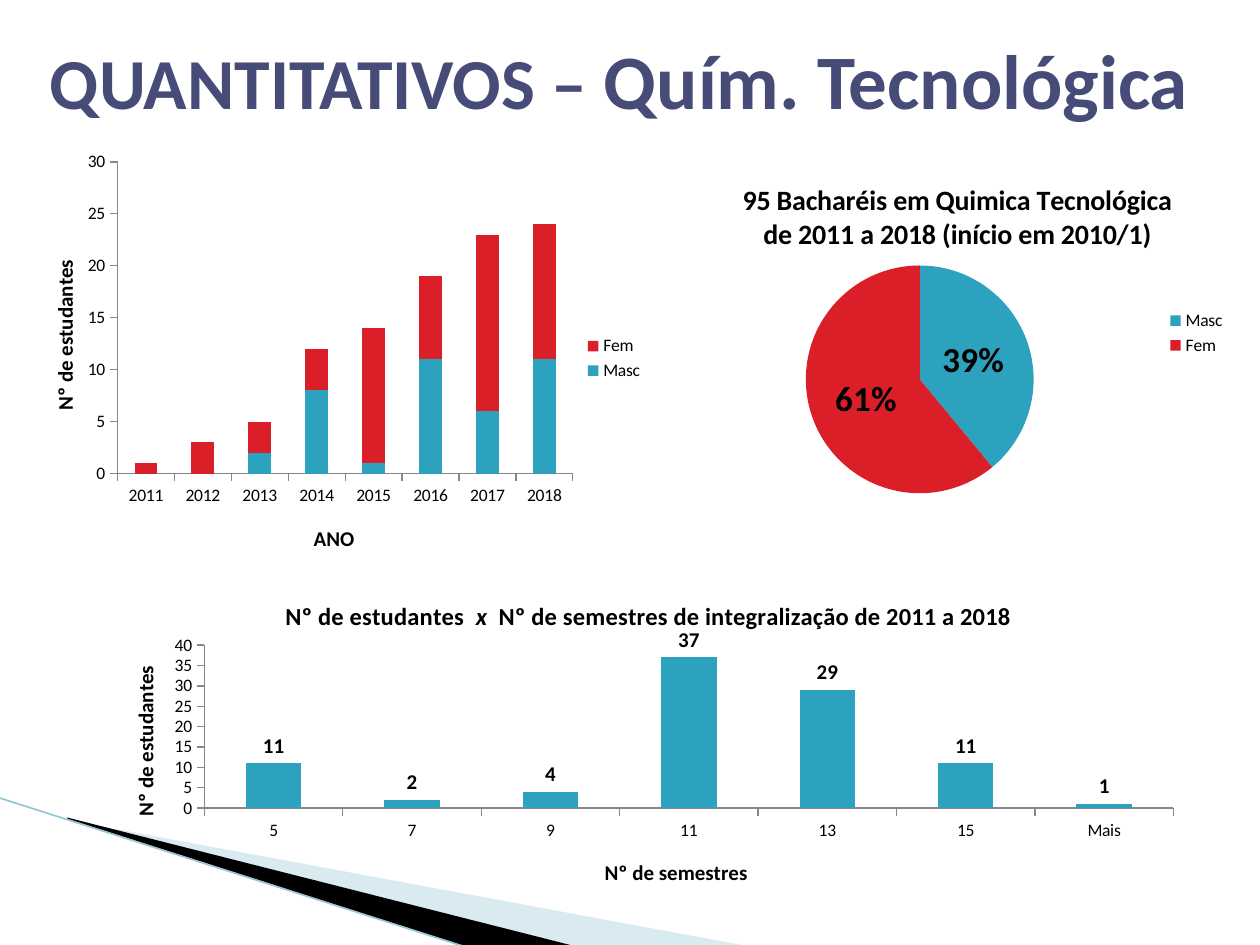
from dataclasses import dataclass

from lxml import etree
from pptx import Presentation
from pptx.chart.data import CategoryChartData
from pptx.dml.color import RGBColor
from pptx.enum.chart import XL_CHART_TYPE, XL_LABEL_POSITION, XL_LEGEND_POSITION, XL_TICK_MARK
from pptx.enum.shapes import MSO_CONNECTOR
from pptx.enum.text import MSO_ANCHOR, PP_ALIGN
from pptx.oxml.ns import qn
from pptx.util import Cm, Pt

STACKED = XL_CHART_TYPE.COLUMN_STACKED
CLUSTERED = XL_CHART_TYPE.COLUMN_CLUSTERED
PIE = XL_CHART_TYPE.PIE
OUTSIDE = XL_TICK_MARK.OUTSIDE
LEGEND_RIGHT = XL_LEGEND_POSITION.RIGHT
LABEL_CENTER = XL_LABEL_POSITION.CENTER
LABEL_ABOVE = XL_LABEL_POSITION.OUTSIDE_END
STRAIGHT = MSO_CONNECTOR.STRAIGHT
MIDDLE = MSO_ANCHOR.MIDDLE
CENTER = PP_ALIGN.CENTER


@dataclass(frozen=True)
class Theme:
    font: str = "Calibri"
    heading: RGBColor = RGBColor(0x47, 0x4B, 0x78)
    text: RGBColor = RGBColor(0, 0, 0)
    masc: RGBColor = RGBColor(0x2D, 0xA2, 0xBF)
    fem: RGBColor = RGBColor(0xDA, 0x1F, 0x28)
    axis: RGBColor = RGBColor(0x87, 0x87, 0x87)
    pale: RGBColor = RGBColor(0xA0, 0xCB, 0xDC)
    edge: RGBColor = RGBColor(0x97, 0xC5, 0xD8)
    tick_size: int = 10
    axis_title_size: int = 12
    heading_sizes: tuple = (41, 44)


THEME = Theme()


def style_font(font, size, color=THEME.text, bold=False):
    font.name = THEME.font
    font.size = Pt(size)
    font.bold = bold
    font.color.rgb = color


def add_run(paragraph, text, size, color=THEME.text, italic=False):
    run = paragraph.add_run()
    run.text = text
    style_font(run.font, size, color, bold=True)
    if italic:
        run.font.italic = True


# Background wedge
def add_wedge(slide, points, color, opacity=None):
    corners = [(Cm(x), Cm(y)) for x, y in points]
    builder = slide.shapes.build_freeform(*corners[0])
    builder.add_line_segments(corners[1:], close=True)
    wedge = builder.convert_to_shape()
    wedge.shadow.inherit = False
    wedge.line.fill.background()
    wedge.fill.solid()
    wedge.fill.fore_color.rgb = color
    if opacity is not None:
        srgb = wedge.fill._xPr.find(".//" + qn("a:srgbClr"))
        etree.SubElement(srgb, qn("a:alpha"), val=str(opacity * 1000))


def add_edge(slide, start, end):
    edge = slide.shapes.add_connector(STRAIGHT, *(Cm(v) for v in start + end))
    edge.line.color.rgb = THEME.edge
    edge.line.width = Pt(0.95)
    etree.SubElement(edge._element.spPr, qn("a:effectLst"))


# Heading
def fill_heading(slide, parts):
    heading = slide.shapes.title
    heading.left, heading.top, heading.width, heading.height = Cm(0.05), Cm(0), Cm(24.87), Cm(3.18)
    heading.text_frame.vertical_anchor = MIDDLE
    paragraph = heading.text_frame.paragraphs[0]
    paragraph.alignment = CENTER
    for text, size in zip(parts, THEME.heading_sizes):
        add_run(paragraph, text, size, THEME.heading)


# Chart parts
def place(parent, index, inner=False, **fractions):
    """Set a manual layout in fractions of the chart area."""
    old = parent.find(qn("c:layout"))
    if old is not None:
        parent.remove(old)
    layout = parent.makeelement(qn("c:layout"))
    parent.insert(index, layout)
    manual = etree.SubElement(layout, qn("c:manualLayout"))
    if inner:
        etree.SubElement(manual, qn("c:layoutTarget"), val="inner")
    for side in "xy":
        etree.SubElement(manual, qn(f"c:{side}Mode"), val="edge")
    for side, fraction in fractions.items():
        etree.SubElement(manual, qn(f"c:{side}"), val=str(fraction))


def write_title(title, parts, size, position):
    paragraph = title.text_frame.paragraphs[0]
    for text, italic in parts:
        add_run(paragraph, text, size, italic=italic)
    x, y = position
    place(title._element, 1, x=x, y=y)


def add_chart(slide, kind, box, categories, series, plot_area):
    data = CategoryChartData()
    data.categories = categories
    for name, values in series:
        data.add_series(name, values)
    chart = slide.shapes.add_chart(kind, *(Cm(v) for v in box), data).chart
    style_font(chart.font, THEME.tick_size)
    chart.has_title = False
    chart.has_legend = False
    x, y, w, h = plot_area
    place(chart._chartSpace.chart.plotArea, 0, inner=True, x=x, y=y, w=w, h=h)
    return chart


def add_legend(chart):
    chart.has_legend = True
    chart.legend.position = LEGEND_RIGHT
    chart.legend.include_in_layout = False
    style_font(chart.legend.font, THEME.tick_size)


def style_axis(axis, title, position):
    axis.has_major_gridlines = False
    axis.major_tick_mark = OUTSIDE
    axis.format.line.color.rgb = THEME.axis
    style_font(axis.tick_labels.font, THEME.tick_size)
    write_title(axis.axis_title, [(title, False)], THEME.axis_title_size, position)


def style_columns(chart, maximum, colors, category_title, category_pos, value_pos):
    style_axis(chart.category_axis, category_title, category_pos)
    values = chart.value_axis
    style_axis(values, "Nº de estudantes", value_pos)
    values.minimum_scale, values.maximum_scale, values.major_unit = 0, maximum, 5
    body = values.axis_title._element.find(".//" + qn("a:bodyPr"))
    body.set("rot", "-5400000")
    body.set("vert", "horz")
    plot = chart.plots[0]
    plot.vary_by_categories = False
    plot.gap_width = 150
    for series, color in zip(plot.series, colors):
        series.format.fill.solid()
        series.format.fill.fore_color.rgb = color


def add_labels(chart, size, position, percent=False):
    plot = chart.plots[0]
    plot.has_data_labels = True
    labels = plot.data_labels
    labels.show_value = not percent
    labels.show_percentage = percent
    labels.position = position
    style_font(labels.font, size, bold=True)


def main():
    prs = Presentation()
    prs.slide_width, prs.slide_height = Cm(25.4), Cm(19.05)
    slide = prs.slides.add_slide(prs.slide_layouts[5])

    add_wedge(slide, [(1.4, 16.54), (15.11, 19.08), (11.58, 19.08), (1.4, 16.51)], THEME.pale, 40)
    add_wedge(slide, [(1.35, 16.48), (11.61, 19.08), (9.45, 19.1), (1.37, 16.51)], THEME.text)
    add_edge(slide, (-0.03, 16.08), (9.42, 19.1))
    fill_heading(slide, ["QUANTITATIVOS – ", "Quím. Tecnológica"])

    # Graduates per year
    by_year = add_chart(
        slide, STACKED, (0.3, 2.92, 12.93, 8.61), [str(year) for year in range(2011, 2019)],
        [("Masc", (0, 0, 2, 8, 1, 11, 6, 11)), ("Fem", (1, 3, 3, 4, 13, 8, 17, 13))],
        (0.16, 0.04, 0.71, 0.73))
    style_columns(by_year, 30, (THEME.masc, THEME.fem), "ANO", (0.46, 0.88), (0.05, 0.26))
    by_year.plots[0].overlap = 100
    add_legend(by_year)

    # Share by gender
    by_gender = add_chart(
        slide, PIE, (13.49, 3.12, 11.48, 7.19), ["Masc", "Fem"],
        [("Series 1", (39, 61))], (0.24, 0.31, 0.4, 0.64))
    by_gender.has_title = True
    write_title(by_gender.chart_title,
                [("95 Bacharéis em Quimica Tecnológica de 2011 a 2018 (início em 2010/1)", False)],
                16, (0.12, 0.06))
    for index, color in enumerate((THEME.masc, THEME.fem)):
        fill = by_gender.plots[0].series[0].points[index].format.fill
        fill.solid()
        fill.fore_color.rgb = color
    add_labels(by_gender, 20, LABEL_CENTER, percent=True)
    add_legend(by_gender)

    # Semesters to completion
    by_semesters = add_chart(
        slide, CLUSTERED, (1.9, 11.53, 22.2, 6.71), ["5", "7", "9", "11", "13", "15", "Mais"],
        [("Series 1", (11, 2, 4, 37, 29, 11, 1))], (0.1, 0.22, 0.88, 0.49))
    by_semesters.has_title = True
    write_title(by_semesters.chart_title,
                [("Nº de estudantes  ", False), ("x", True),
                 ("  Nº de semestres de integralização de 2011 a 2018", False)],
                14, (0.17, 0.07))
    style_columns(by_semesters, 40, (THEME.masc,), "Nº de semestres", (0.46, 0.85), (0.03, 0.27))
    add_labels(by_semesters, 12, LABEL_ABOVE)

    prs.save("out.pptx")


if __name__ == "__main__":
    main()
